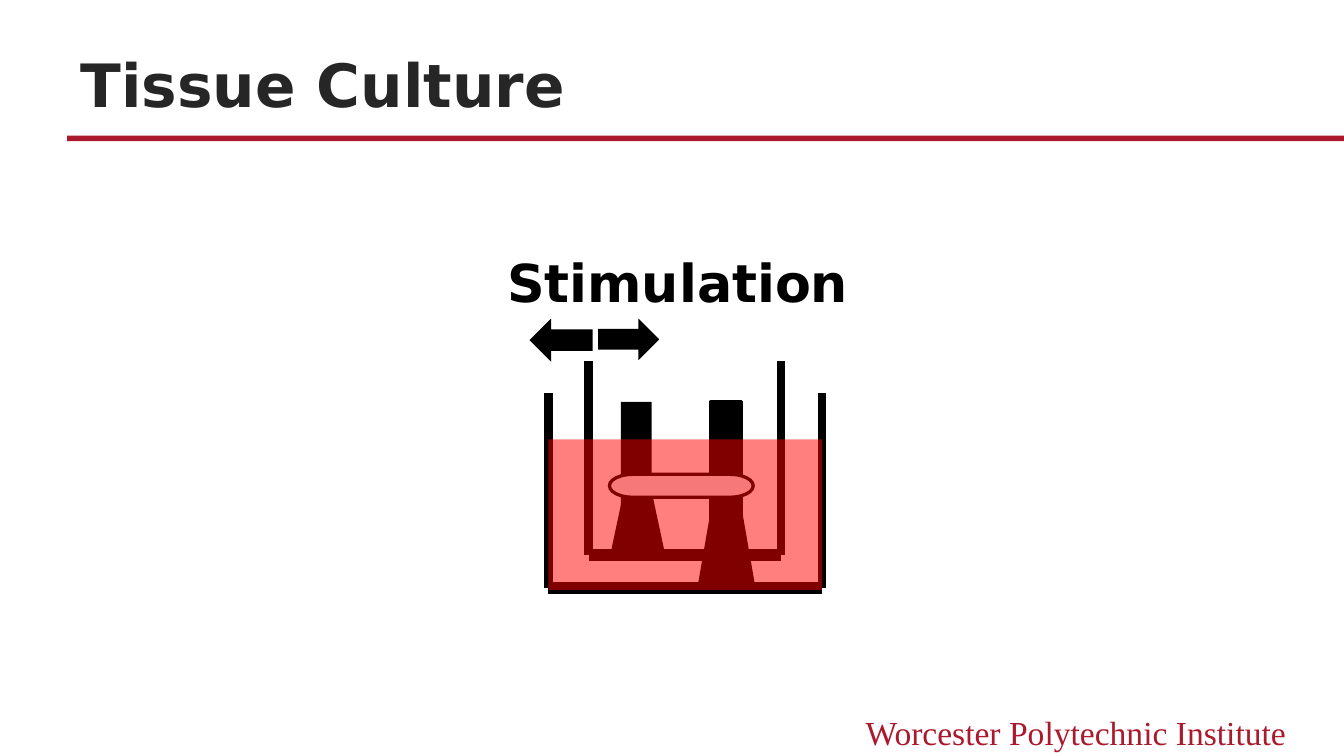
from typing import Any, NamedTuple

from lxml import etree
from pptx import Presentation
from pptx import util as u
from pptx.dml.color import RGBColor
from pptx.enum import shapes, text
from pptx.oxml import ns

# The grid has square cells, 100 columns across the 16:9 slide.
WIDE = u.Inches(10)
TALL = u.Emu(WIDE * 9 // 16)
CELL = WIDE / 100
KIND = shapes.MSO_SHAPE
BLACK, RED, BRAND = "000000", "FF0000", "AB192D"


class Box(NamedTuple):
    left: float
    top: float
    wide: float
    tall: float


class Part(NamedTuple):
    kind: KIND
    box: Box
    fill: str = BLACK
    edge: float = 0
    alpha: int = 100
    turn: int = 0


class Dish(NamedTuple):
    left: float
    right: float
    rim: float
    base: float


class Label(NamedTuple):
    words: str
    box: Box
    font: dict[str, Any]
    align: text.PP_ALIGN


def span(*cells: float) -> list[u.Emu]:
    return [u.Emu(round(c * CELL)) for c in cells]


def paint(target: Any, tone: str) -> None:
    if hasattr(target, "solid"):
        target.solid()
        target = target.fore_color
    else:
        target = target.color
    target.rgb = RGBColor.from_string(tone)


def style(font: Any, form: dict[str, Any], tone: str) -> None:
    for key, value in form.items():
        setattr(font, key, value)
    paint(font, tone)


def draw(home: Any, part: Part) -> None:
    shape = home.add_shape(part.kind, *span(*part.box))
    shape.shadow.inherit = False
    shape.rotation = part.turn
    paint(shape.fill, part.fill)
    if part.edge:
        paint(shape.line, BLACK)
        shape.line.width = u.Pt(part.edge)
    else:
        shape.line.fill.background()
    if part.alpha < 100:
        tint = shape.fill._xPr.find(".//" + ns.qn("a:srgbClr"))
        etree.SubElement(tint, ns.qn("a:alpha"), val=str(part.alpha * 1000))


def hold(home: Any, dish: Dish) -> None:
    """Draw an open dish from two walls and a heavier floor."""
    left, right, rim, base = dish
    for x1, y1, x2, y2, width in (
        (left, rim, left, base, 4.5),
        (right, base, left, base, 6),
        (right, base, right, rim, 4.5),
    ):
        line = home.add_connector(
            shapes.MSO_CONNECTOR.STRAIGHT, *span(x1, y1, x2, y2)
        )
        paint(line.line, BLACK)
        line.line.width = u.Pt(width)
        etree.SubElement(line._element.spPr, ns.qn("a:effectLst"))


def write(home: Any, label: Label, tone: str) -> None:
    frame = home.add_textbox(*span(*label.box)).text_frame
    frame.word_wrap = True
    frame.auto_size = text.MSO_AUTO_SIZE.SHAPE_TO_FIT_TEXT
    para = frame.paragraphs[0]
    para.alignment = label.align
    run = para.add_run()
    run.text = label.words
    style(run.font, label.font, tone)


def head(slide: Any, words: str) -> None:
    title = slide.shapes.title
    title.left, title.top, title.width, title.height = span(5, 2.8, 90, 6.6)
    frame = title.text_frame
    frame.text = words
    frame.vertical_anchor = text.MSO_ANCHOR.BOTTOM
    para = frame.paragraphs[0]
    para.alignment = text.PP_ALIGN.LEFT
    form = {"name": "DejaVu Sans", "size": u.Pt(32), "bold": True}
    style(para.runs[0].font, form, "262626")


OUTER = Dish(40.8, 61.15, 29.25, 43.75)
INNER = Dish(43.8, 58.1, 26.85, 41.3)
RIGHT = (
    Part(KIND.TRAPEZOID, Box(52, 37.9, 4.1, 5.9), edge=1.75),
    Part(KIND.RECTANGLE, Box(52.9, 29.9, 2.3, 10), edge=1.75),
)
LEFT = (
    Part(KIND.TRAPEZOID, Box(45.4, 36.5, 4.1, 4.8)),
    Part(KIND.RECTANGLE, Box(46.2, 29.9, 2.3, 8.2)),
)
TISSUE = Part(
    KIND.FLOWCHART_TERMINATOR, Box(45.35, 35.3, 10.7, 1.7), "F0F1F1", 1.75
)
FLUID = Part(
    KIND.RECTANGLE,
    Box(OUTER.left, 32.7, OUTER.right - OUTER.left, 11.2),
    RED,
    alpha=50,
)
ARROWS = (
    Part(KIND.RIGHT_ARROW, Box(44.5, 23.7, 4.55, 3.1)),
    Part(KIND.RIGHT_ARROW, Box(39.4, 23.7, 4.7, 3.2), turn=180),
)
SCHOOL = Label(
    "Worcester Polytechnic Institute",
    Box(60, 52.5, 36.7, 4),
    {"name": "Times New Roman", "size": u.Pt(18)},
    text.PP_ALIGN.RIGHT,
)
MOTION = Label(
    "Stimulation",
    Box(17.5, 18.15, 65.85, 5.7),
    {"name": "DejaVu Sans", "size": u.Pt(28), "bold": True},
    text.PP_ALIGN.CENTER,
)


def main() -> None:
    deck = Presentation()
    deck.slide_width, deck.slide_height = WIDE, TALL
    slide = deck.slides.add_slide(deck.slide_layouts[5])
    home = slide.shapes
    draw(home, Part(KIND.RECTANGLE, Box(5, 10.1, 95, 0.4), BRAND))
    write(home, SCHOOL, BRAND)
    head(slide, "Tissue Culture")

    hold(home.add_group_shape().shapes, OUTER)
    for posts, dish in ((RIGHT, None), (LEFT, INNER)):
        group = home.add_group_shape().shapes
        for post in posts:
            draw(group, post)
        if dish:
            hold(group, dish)
    for part in (TISSUE, FLUID, *ARROWS):
        draw(home, part)
    write(home, MOTION, BLACK)
    deck.save("out.pptx")


if __name__ == "__main__":
    main()
